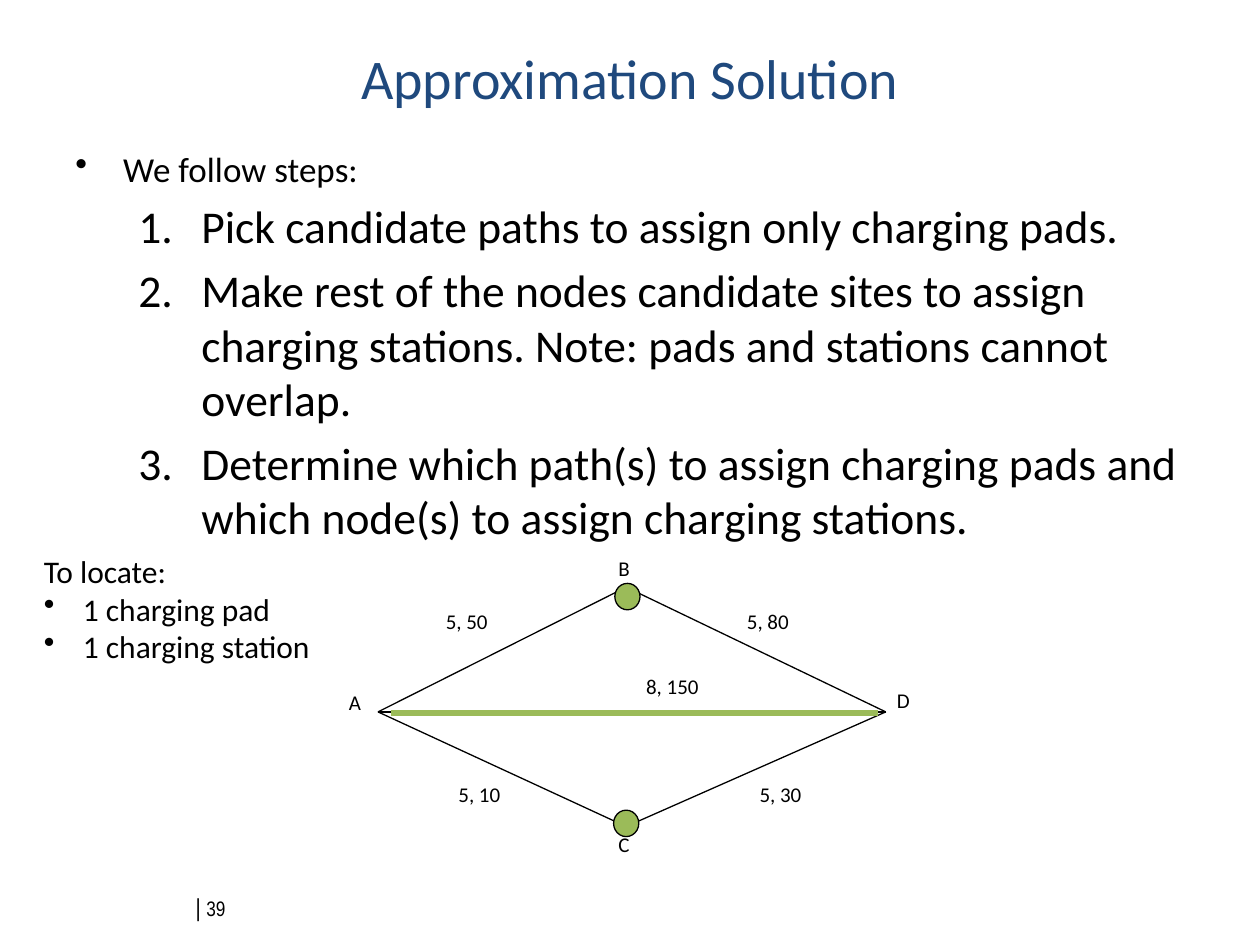
import pptx
import pptx.util
import pptx.dml.color
import pptx.enum.shapes
import pptx.enum.text
import pptx.oxml
import pptx.oxml.ns

Inches = pptx.util.Inches
Align = pptx.enum.text.PP_ALIGN
Anchor = pptx.enum.text.MSO_ANCHOR
BLACK, NAVY, GREEN = "000000", "1F497D", "9BBB59"


def tint(code):
    return pptx.dml.color.RGBColor.from_string(code)


class Deck:
    """Holds the text style and the current slide, and draws each kind of element."""

    def __init__(self, show):
        self.face = "Calibri"
        self.slide = show.slides.add_slide(show.slide_layouts[5])

    def place(self, shape, box):
        for name, value in zip(("left", "top", "width", "height"), box):
            setattr(shape, name, Inches(value))

    def words(self, para, text, size, color=BLACK, face=None):
        run = para.add_run()
        run.text = text
        style = {"name": face or self.face, "size": pptx.util.Pt(size)}
        for name, value in style.items():
            setattr(run.font, name, value)
        run.font.color.rgb = tint(color)

    def mark(self, para, tag, attrs, left, hang):
        props = para._p.get_or_add_pPr()
        props.set("marL", str(Inches(left)))
        props.set("indent", str(-Inches(hang)))
        item = props.makeelement(pptx.oxml.ns.qn(tag), attrs)
        props.append(item)

    def title(self, text, box):
        shape = self.slide.shapes.title
        self.place(shape, box)
        frame = shape.text_frame
        form = {"margin_left": Inches(0.1), "margin_right": Inches(0.1),
                "margin_top": Inches(0.1), "margin_bottom": Inches(0.1),
                "vertical_anchor": Anchor.MIDDLE, "word_wrap": True}
        for name, value in form.items():
            setattr(frame, name, value)
        para = frame.paragraphs[0]
        para.alignment = Align.CENTER
        self.words(para, text, 32, NAVY)

    def frame(self, box):
        frame = self.slide.shapes.add_textbox(*map(Inches, box)).text_frame
        frame.word_wrap = True
        return frame

    def label(self, text, box):
        self.words(self.frame(box).paragraphs[0], text, 12)

    def steps(self, head, items, box):
        frame = self.frame(box)
        para = frame.paragraphs[0]
        self.mark(para, "a:buChar", {"char": "•"}, 0.38, 0.38)
        self.words(para, head, 20)
        for text in items:
            para = frame.add_paragraph()
            para.level = 1
            para.space_before = pptx.util.Pt(5.2)
            self.mark(para, "a:buAutoNum", {"type": "arabicPeriod"}, 1, 0.5)
            self.words(para, text, 26)

    def goals(self, head, items, box):
        frame = self.frame(box)
        self.words(frame.paragraphs[0], head, 18)
        for text in items:
            para = frame.add_paragraph()
            self.mark(para, "a:buChar", {"char": "•"}, 0.31, 0.31)
            self.words(para, text, 18)

    def number(self, text, box):
        frame = self.frame(box)
        frame.vertical_anchor = Anchor.MIDDLE
        frame.margin_right = Inches(0.14)
        para = frame.paragraphs[0]
        para.alignment = Align.RIGHT
        self.words(para, "| ", 14, face="Arial Narrow")
        self.words(para, text, 12, face="Arial Narrow")

    def edge(self, start, end, color=BLACK, width=0.75):
        kind = pptx.enum.shapes.MSO_CONNECTOR.STRAIGHT
        line = self.slide.shapes.add_connector(
            kind, *map(Inches, (*start, *end)))
        line.line.color.rgb = tint(color)
        line.line.width = pptx.util.Pt(width)
        props = line._element.spPr
        props.append(props.makeelement(pptx.oxml.ns.qn("a:effectLst"), {}))

    def node(self, left, top):
        kind = pptx.enum.shapes.MSO_SHAPE.OVAL
        dot = self.slide.shapes.add_shape(
            kind, *map(Inches, (left, top, 0.2, 0.21)))
        dot.shadow.inherit = False
        dot.fill.solid()
        dot.fill.fore_color.rgb = tint(GREEN)
        dot.line.color.rgb = tint(BLACK)
        dot.line.width = pptx.util.Pt(0.75)


def main():
    show = pptx.Presentation()
    show.slide_width, show.slide_height = Inches(10), Inches(7.5)
    deck = Deck(show)
    deck.number("39", (1.26, 7, 0.67, 0.4))
    deck.steps("We follow steps:", [
        "Pick candidate paths to assign only charging pads.",
        "Make rest of the nodes candidate sites to assign charging stations. "
        "Note: pads and stations cannot overlap.",
        "Determine which path(s) to assign charging pads and which node(s) "
        "to assign charging stations.",
    ], (0.5, 1.12, 9, 5.53))
    deck.title("Approximation Solution", (0.5, 0.24, 9, 0.74))

    spots = {"A": (3, 5.65), "B": (4.97, 4.66),
             "C": (4.97, 6.56), "D": (7.03, 5.65)}
    for start, end in ("AD", "AB", "BD", "AC", "DC"):
        deck.edge(spots[start], spots[end])
    names = {"A": (2.67, 5.42), "B": (4.81, 4.36),
             "C": (4.81, 6.55), "D": (7.02, 5.41)}
    for name, spot in names.items():
        deck.label(name, (*spot, 0.41, 0.28))

    deck.edge((3.1, 5.66), (6.97, 5.66), GREEN, 3.5)
    deck.node(4.88, 4.63)
    deck.node(4.87, 6.43)
    costs = {"5, 50": (3.44, 4.78), "5, 80": (5.83, 4.78),
             "8, 150": (5.03, 5.3),
             "5, 10": (3.54, 6.15), "5, 30": (5.93, 6.15)}
    for cost, spot in costs.items():
        deck.label(cost, (*spot, 1.04, 0.36))
    deck.goals("To locate:", ["1 charging pad", "1 charging station"],
               (0.25, 4.33, 2.83, 0.91))
    show.save("out.pptx")


if __name__ == "__main__":
    main()
